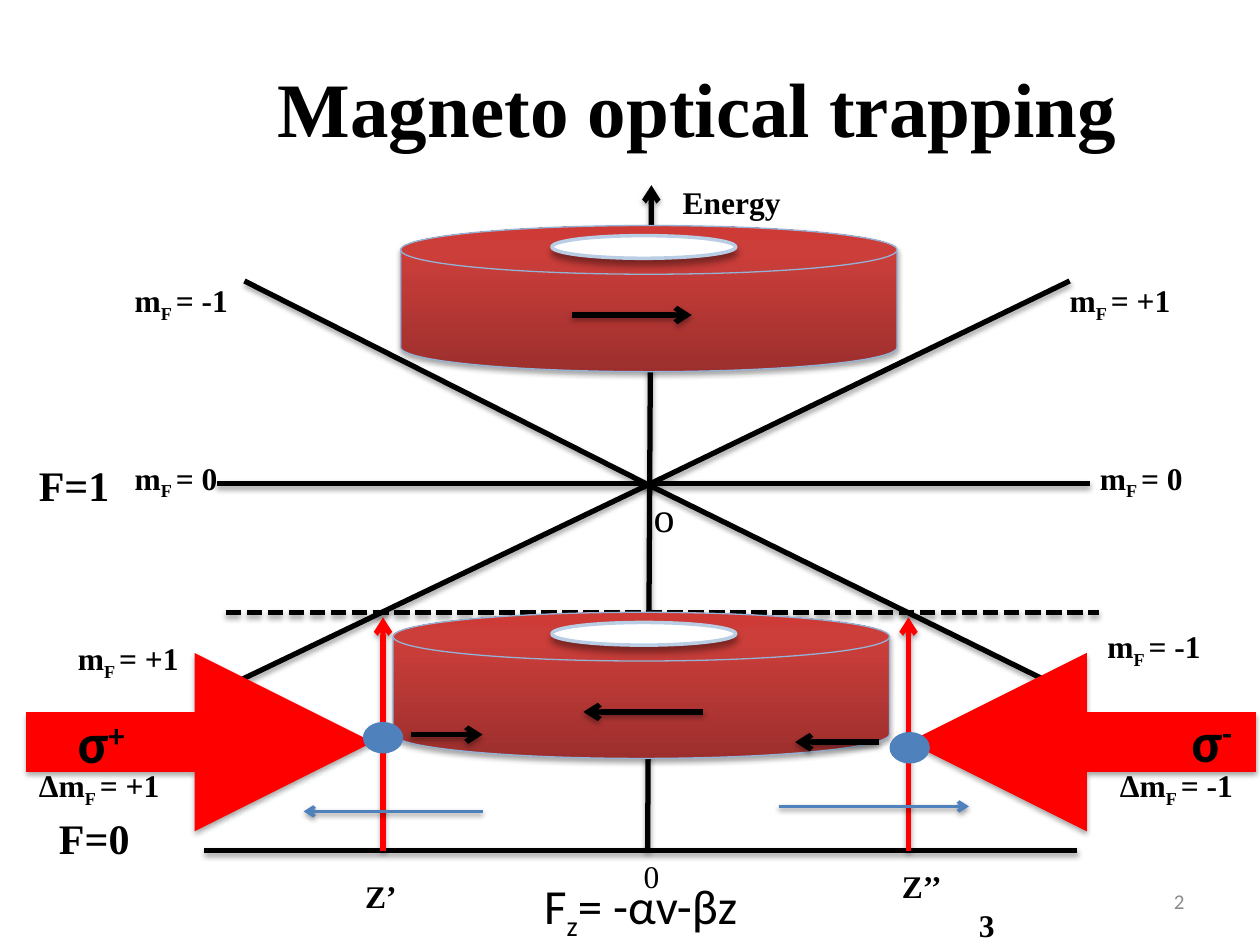
from typing import NamedTuple

from lxml.etree import SubElement
from pptx import Presentation
from pptx.dml.color import RGBColor
from pptx.enum.dml import MSO_LINE
from pptx.enum.shapes import MSO_CONNECTOR, MSO_SHAPE
from pptx.enum.text import MSO_ANCHOR, MSO_AUTO_SIZE, PP_ALIGN
from pptx.oxml import parse_xml
from pptx.oxml.ns import nsdecls, qn
from pptx.util import Emu, Pt

PX = 9144  # 100 px to the inch
HUES = {
    "black": "000000", "red": "FF0000", "blue": "4F81BD", "white": "FFFFFF",
    "gray": "8C8C8C", "rim": "95B3D7", "ring": "B9CDE5",
    "dark": "9C2F2D", "mid": "CB3E3A", "light": "CE3B37",
}
SERIF, SANS = "Times New Roman", "Calibri"


class Shade(NamedTuple):
    alpha: int
    blur: float
    dist: float


class Line(NamedTuple):
    x1: int
    y1: int
    x2: int
    y2: int
    hue: str = "black"
    width: int = 3
    tip: str = ""
    dash: bool = False
    shade: Shade = Shade(35, 3.1, 1.8)


class Run(NamedTuple):
    text: str
    base: int = 0


class Label(NamedTuple):
    x: int
    y: int
    w: int
    h: int
    runs: list[Run]
    size: int = 18
    bold: bool = True
    font: str = SERIF
    hue: str = "black"


def px(n: int) -> Emu:
    return Emu(n * PX)


def rgb(hue: str) -> RGBColor:
    return RGBColor.from_string(HUES[hue])


def add_shade(props, shade: Shade) -> None:
    """Put a downward shadow in the effect list."""
    effect = props.find(qn("a:effectLst"))
    if effect is None:
        effect = SubElement(props, qn("a:effectLst"))
    outer = SubElement(effect, qn("a:outerShdw"), blurRad=str(Pt(shade.blur)),
                       dist=str(Pt(shade.dist)), dir="5400000", rotWithShape="0")
    color = SubElement(outer, qn("a:srgbClr"), val=HUES["black"])
    SubElement(color, qn("a:alpha"), val=str(shade.alpha * 1000))


def draw_line(shapes, item: Line) -> None:
    link = shapes.add_connector(MSO_CONNECTOR.STRAIGHT, px(item.x1), px(item.y1),
                                px(item.x2), px(item.y2))
    link.line.color.rgb = rgb(item.hue)
    link.line.width = Pt(item.width)
    if item.dash:
        link.line.dash_style = MSO_LINE.SQUARE_DOT
    if item.tip:
        SubElement(link.line._get_or_add_ln(), qn("a:tailEnd"), type=item.tip)
    add_shade(link._element.spPr, item.shade)


def draw_label(shapes, item: Label):
    box = shapes.add_textbox(px(item.x), px(item.y), px(item.w), px(item.h))
    frame = box.text_frame
    frame.word_wrap = False
    frame.auto_size = MSO_AUTO_SIZE.SHAPE_TO_FIT_TEXT
    for part in item.runs:
        run = frame.paragraphs[0].add_run()
        run.text = part.text
        run.font.size = Pt(item.size)
        run.font.bold = item.bold
        run.font.name = item.font
        run.font.color.rgb = rgb(item.hue)
        if part.base:
            run._r.get_or_add_rPr().set("baseline", str(part.base * 1000))
    return frame


def draw_block(shapes, item: Label, align: PP_ALIGN, inset: int = 10) -> None:
    """Wrapped text, centred in height."""
    frame = draw_label(shapes, item)
    frame.auto_size = MSO_AUTO_SIZE.NONE
    frame.word_wrap = True
    frame.vertical_anchor = MSO_ANCHOR.MIDDLE
    frame.margin_left = px(inset)
    frame.paragraphs[0].alignment = align


def draw_shape(shapes, kind: MSO_SHAPE, x: int, y: int, w: int, h: int, hue: str):
    shape = shapes.add_shape(kind, px(x), px(y), px(w), px(h))
    shape.shadow.inherit = False
    shape.fill.solid()
    shape.fill.fore_color.rgb = rgb(hue)
    shape.line.fill.background()
    return shape


def set_edge(shape, hue: str, width: float, shade: Shade) -> None:
    shape.line.color.rgb = rgb(hue)
    shape.line.width = Pt(width)
    add_shade(shape._element.spPr, shade)


def draw_coil(shapes, x: int, y: int, start: int, end: int, drop: int) -> None:
    """A coil with its hole and the arrow of its current."""
    group = shapes.add_group_shape().shapes
    disk = draw_shape(group, MSO_SHAPE.FLOWCHART_MAGNETIC_DISK, x, y, 394, 116, "mid")
    stops = "".join(f'<a:gs pos="{pos}000"><a:srgbClr val="{HUES[hue]}"/></a:gs>'
                    for pos, hue in ((0, "dark"), (80, "mid"), (100, "light")))
    props = disk._element.spPr
    props.replace(props.find(qn("a:solidFill")), parse_xml(
        f'<a:gradFill {nsdecls("a")} rotWithShape="1"><a:gsLst>{stops}</a:gsLst>'
        '<a:lin ang="16200000" scaled="0"/></a:gradFill>'))
    set_edge(disk, "rim", 0.75, Shade(35, 3.1, 1.8))
    hole = draw_shape(group, MSO_SHAPE.OVAL, 438, y + 8, 146, 18, "white")
    set_edge(hole, "ring", 2, Shade(40, 4, 3))
    draw_line(group, Line(start, y + drop, end, y + drop, tip="arrow"))


def level(x: int, y: int, w: int, value: str, lead: str = "m") -> Label:
    return Label(x, y, w, 40, [Run(lead), Run("F ", -25), Run(f"= {value}")])


SOFT = Shade(38, 3.1, 1.6)
LINES = [
    # Axes and the lower branches
    Line(514, 675, 517, 147, tip="arrow"),
    Line(162, 675, 855, 675),
    Line(515, 385, 838, 544),
    Line(182, 544, 516, 384),
    # Laser beams
    Line(21, 589, 296, 589, "red", 34, "triangle"),
    Line(997, 589, 721, 589, "red", 34, "triangle"),
    # Middle level, laser level and upper branches
    Line(172, 384, 865, 384),
    Line(179, 486, 872, 486, dash=True),
    Line(516, 384, 849, 223),
    Line(194, 223, 513, 384),
    # Excitation and outward motion
    Line(304, 675, 304, 490, "red", tip="arrow"),
    Line(721, 675, 721, 490, "red", tip="arrow"),
    Line(383, 644, 241, 644, "blue", 2, "arrow", shade=SOFT),
    Line(618, 640, 769, 640, "blue", 2, "arrow", shade=SOFT),
]
PUSHES = [Line(326, 583, 383, 583, tip="arrow"), Line(698, 589, 631, 589, tip="arrow")]
LABELS = [
    level(839, 218, 103, "+1"), level(869, 493, 97, "-1"),
    level(97, 218, 97, "-1"), level(52, 502, 103, "+1"),
    level(863, 359, 88, "0"), level(97, 359, 88, "0"),
    level(21, 603, 119, "+1", "Δm"), level(879, 603, 113, "-1", "Δm"),
    Label(936, 556, 69, 64, [Run("σ"), Run("-", 30)], 32, font=SANS),
    Label(52, 557, 75, 64, [Run("σ"), Run("+", 30)], 32, font=SANS),
    Label(21, 360, 77, 50, [Run("F=1")], 24),
    Label(37, 640, 77, 50, [Run("F=0")], 24),
    Label(422, 690, 196, 57, [Run("F"), Run("z", -25), Run("= -αv-βz")], 28, False, SANS),
    Label(767, 714, 33, 40, [Run("3")]),
    Label(509, 384, 37, 50, [Run("o")], 24, False),
    Label(501, 675, 34, 40, [Run("0")], bold=False),
    Label(280, 691, 45, 40, [Run("Z’")]),
    Label(706, 683, 52, 40, [Run("Z’’")]),
    Label(532, 140, 99, 40, [Run("Energy")]),
]


def main() -> None:
    deck = Presentation()
    deck.slide_width, deck.slide_height = px(1000), px(750)
    shapes = deck.slides.add_slide(deck.slide_layouts[6]).shapes

    # Page number and title
    draw_block(shapes, Label(717, 695, 233, 40, [Run("2")], 12, False, SANS, "gray"),
               PP_ALIGN.RIGHT)
    draw_block(shapes, Label(67, 22, 900, 125, [Run("Magneto optical trapping")], 44),
               PP_ALIGN.CENTER, 83)

    # Level diagram
    for item in LINES:
        draw_line(shapes, item)
    for item in LABELS:
        draw_label(shapes, item)

    # Coils with opposite currents
    draw_coil(shapes, 318, 179, 454, 549, 71)
    draw_coil(shapes, 312, 486, 558, 463, 79)

    # Atoms and the forces on them
    for x, y in ((706, 581), (288, 573)):
        draw_shape(shapes, MSO_SHAPE.OVAL, x, y, 32, 25, "blue")
    for item in PUSHES:
        draw_line(shapes, item)

    deck.save("out.pptx")


if __name__ == "__main__":
    main()
